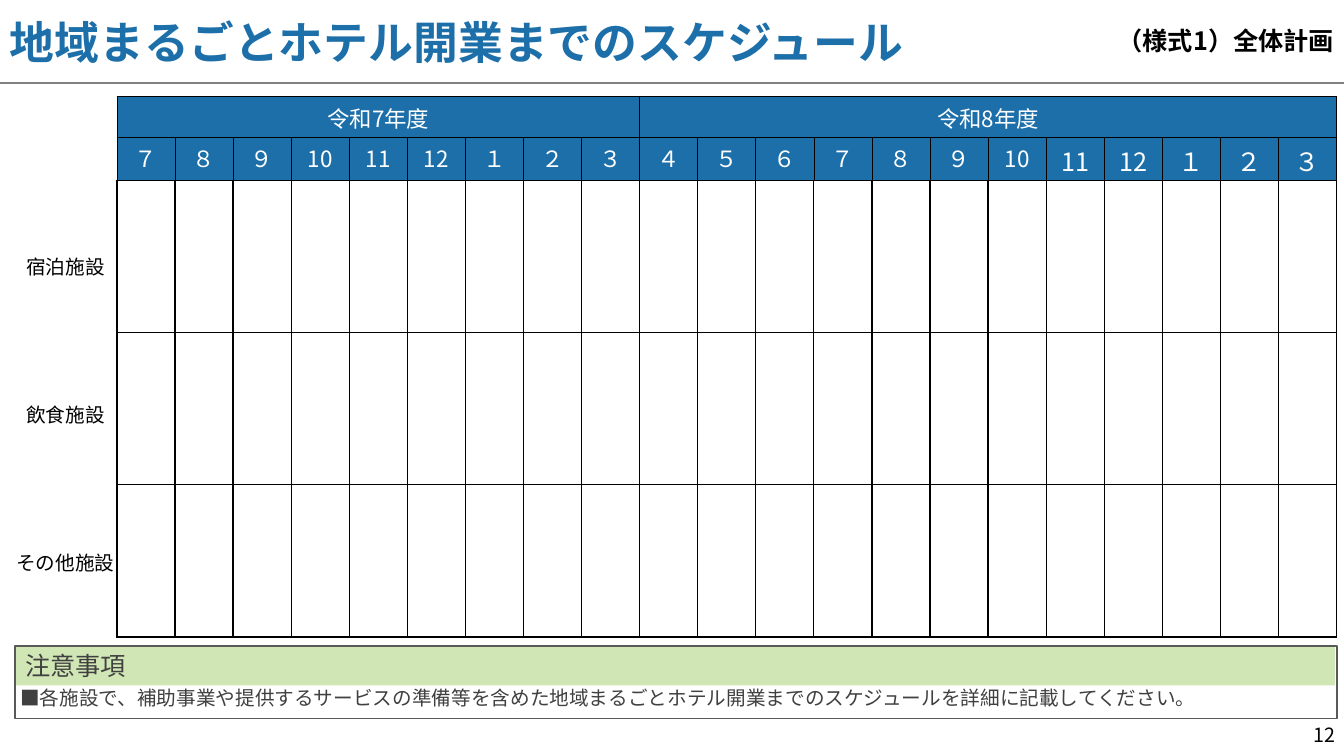
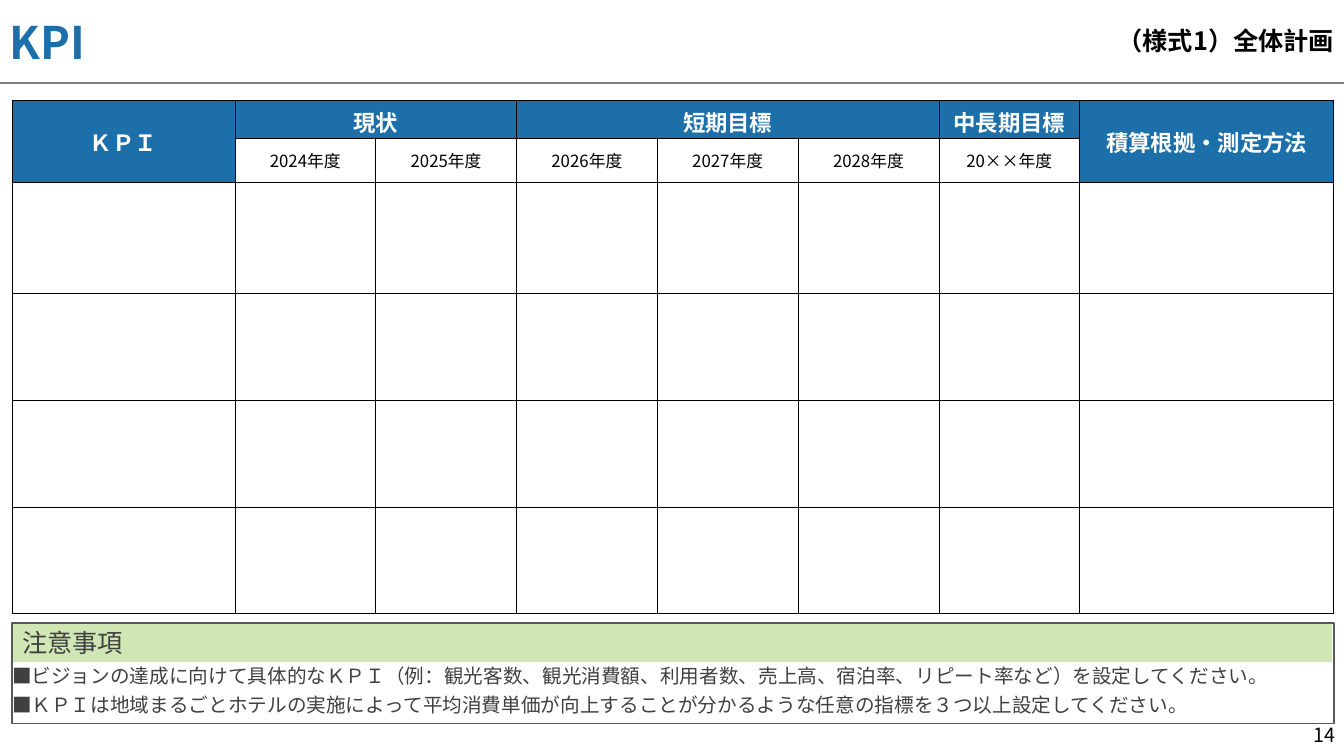
"""Build the schedule and KPI planning sheets."""
from lxml import etree
from pptx import Presentation
from pptx.dml.color import RGBColor
from pptx.enum.shapes import MSO_CONNECTOR, MSO_SHAPE
from pptx.enum.text import MSO_ANCHOR, PP_ALIGN
from pptx.oxml.ns import qn
from pptx.util import Inches, Pt

BLUE = RGBColor(0x1D, 0x6F, 0xA9)
GREEN = RGBColor(0xD1, 0xE6, 0xB5)
BLACK = RGBColor(0, 0, 0)
WHITE = RGBColor(0xFF, 0xFF, 0xFF)
DARK = RGBColor(0x40, 0x40, 0x40)
FRAME_GRAY = RGBColor(0x59, 0x59, 0x59)
RULE_GRAY = RGBColor(0x80, 0x80, 0x80)
FONT = "Noto Sans CJK JP"
LEFT, CENTER, RIGHT = PP_ALIGN.LEFT, PP_ALIGN.CENTER, PP_ALIGN.RIGHT
TOP, MIDDLE = MSO_ANCHOR.TOP, MSO_ANCHOR.MIDDLE
RECTANGLE = MSO_SHAPE.RECTANGLE
STRAIGHT = MSO_CONNECTOR.STRAIGHT


def write(frame, *lines, size=14, color=BLACK, bold=False, align=LEFT, note=False):
    """Fill a text frame with one formatted paragraph per line."""
    for index, line in enumerate(lines):
        para = frame.paragraphs[0] if index == 0 else frame.add_paragraph()
        para.alignment = align
        if note:
            para.line_spacing = Pt(8)
            para.space_before = Pt(0.9 if index else 0)
            para.space_after = Pt(12)
        span = para.add_run()
        span.text = line
        span.font.name = FONT
        span.font.size = Pt(size)
        span.font.bold = bold
        span.font.color.rgb = color
        east_asian = etree.SubElement(span.font._element, qn("a:ea"))
        east_asian.set("typeface", FONT)


def add_text(page, left, top, width, height, *lines, anchor=TOP, **style):
    """Place a wrapped text box and write its lines."""
    box = page.shapes.add_textbox(Inches(left), Inches(top), Inches(width), Inches(height))
    frame = box.text_frame
    frame.word_wrap = True
    frame.vertical_anchor = anchor
    if style.get("note"):
        frame.margin_left = frame.margin_right = frame.margin_bottom = 0
        frame.margin_top = Inches(0.01)
    write(frame, *lines, **style)


months = ["７", "８", "９", "10", "11", "12", "１", "２", "３", "４", "５", "６"]
month_row = [(1, column, 1, 1, months[column % 12], 16 if column < 16 else 18, True)
             for column in range(21)]
years = ["2024年度", "2025年度", "2026年度", "2027年度", "2028年度", "20××年度"]
year_row = [(1, column, 1, 1, year, 12, False) for column, year in enumerate(years, 1)]

SHEETS = [
    dict(
        title="地域まるごとホテル開業までのスケジュール", number="12",
        left=1.16, top=0.96, columns=[12.1 / 21] * 21, rows=[0.4, 0.43] + [1.51] * 3,
        headers=[(0, 0, 1, 9, "令和7年度", 16, True),
                 (0, 9, 1, 12, "令和8年度", 16, True)] + month_row,
        bold=False, anchor=TOP, body_border=1,
        row_labels=["宿泊施設", "飲食施設", "その他施設"],
        note_left=0.15, note_top=6.41, note_height=0.72, note_text=(0.2, 6.92, 0.13),
        notes=["■各施設で、補助事業や提供するサービスの準備等を含めた地域まるごとホテル開業までのスケジュールを詳細に記載してください。"],
    ),
    dict(
        title="KPI", number="14",
        left=0.12, top=1, columns=[2.21] + [8.38 / 6] * 6 + [2.52],
        rows=[0.37, 0.44, 1.1] + [1.06] * 3,
        headers=[(0, 0, 2, 1, "ＫＰＩ", 16, True),
                 (0, 1, 1, 2, "現状", 16, True),
                 (0, 3, 1, 3, "短期目標", 16, True),
                 (0, 6, 1, 1, "中長期目標", 16, True),
                 (0, 7, 2, 1, "積算根拠・測定方法", 16, True)] + year_row,
        bold=True, anchor=MIDDLE, body_border=0.5, row_labels=[],
        note_left=0.12, note_top=6.18, note_height=1, note_text=(0.12, 6.7, 0.42),
        notes=["■ビジョンの達成に向けて具体的なＫＰＩ（例：観光客数、観光消費額、利用者数、売上高、宿泊率、リピート率など）を設定してください。",
               "■ＫＰＩは地域まるごとホテルの実施によって平均消費単価が向上することが分かるような任意の指標を３つ以上設定してください。"],
    ),
]

deck = Presentation()
deck.slide_width, deck.slide_height = Inches(13.33), Inches(7.5)

for sheet in SHEETS:
    page = deck.slides.add_slide(deck.slide_layouts[6])

    rule = page.shapes.add_connector(STRAIGHT, 0, Inches(0.82), deck.slide_width, Inches(0.82))
    rule.line.color.rgb = RULE_GRAY
    rule.line.width = Pt(1.5)
    etree.SubElement(rule._element.spPr, qn("a:effectLst"))

    add_text(page, 0, 0, 10.59, 0.82, sheet["title"],
             size=32, color=BLUE, bold=True, anchor=MIDDLE)
    add_text(page, 10.32, 0, 3.01, 0.8, "（様式1）全体計画",
             size=18, bold=True, align=RIGHT, anchor=MIDDLE)
    add_text(page, 12.67, 7.12, 0.67, 0.38, sheet["number"], align=RIGHT)

    columns, rows = sheet["columns"], sheet["rows"]
    table = page.shapes.add_table(
        len(rows), len(columns), Inches(sheet["left"]), Inches(sheet["top"]),
        Inches(sum(columns)), Inches(sum(rows))).table
    table.first_row = table.horz_banding = False
    for column, width in zip(table.columns, columns):
        column.width = Inches(width)
    for row, height in zip(table.rows, rows):
        row.height = Inches(height)

    for row_index, row in enumerate(table.rows):
        for cell in row.cells:
            cell.fill.background()
            properties = cell._tc.get_or_add_tcPr()
            for position, side in enumerate(("lnL", "lnR", "lnT", "lnB")):
                thin = row_index == 0 or (row_index == 1 and side != "lnB")
                weight = 0.5 if thin else sheet["body_border"]
                border = etree.Element(qn(f"a:{side}"), w=str(Pt(weight)))
                fill = etree.SubElement(border, qn("a:solidFill"))
                etree.SubElement(fill, qn("a:srgbClr"), val=str(BLACK))
                properties.insert(position, border)

    for row, column, tall, wide, text, size, filled in sheet["headers"]:
        cell = table.cell(row, column)
        if tall * wide > 1:
            cell.merge(table.cell(row + tall - 1, column + wide - 1))
        cell.vertical_anchor = sheet["anchor"]
        if filled:
            cell.fill.solid()
            cell.fill.fore_color.rgb = BLUE
        write(cell.text_frame, text, size=size, color=WHITE if filled else BLACK,
              bold=sheet["bold"] and filled, align=CENTER)

    for index, label in enumerate(sheet["row_labels"]):
        add_text(page, 0, 2.48 + 1.47 * index, 1.3, 0.34, label, align=CENTER)

    left, top = Inches(sheet["note_left"]), Inches(sheet["note_top"])
    band = page.shapes.add_shape(RECTANGLE, left, top, Inches(13.09), Inches(0.39))
    band.fill.solid()
    band.fill.fore_color.rgb = GREEN
    band.line.fill.background()
    band.text_frame.vertical_anchor = MIDDLE
    write(band.text_frame, "注意事項", size=18, color=DARK)
    outline = page.shapes.add_shape(RECTANGLE, left, top, Inches(13.11),
                                    Inches(sheet["note_height"]))
    outline.fill.background()
    outline.line.color.rgb = FRAME_GRAY
    outline.line.width = Pt(1)
    for shape in (band, outline):
        shape.shadow.inherit = False

    text_left, text_top, text_height = sheet["note_text"]
    add_text(page, text_left, text_top, 12.99, text_height, *sheet["notes"],
             color=DARK, note=True)

deck.save("out.pptx")
